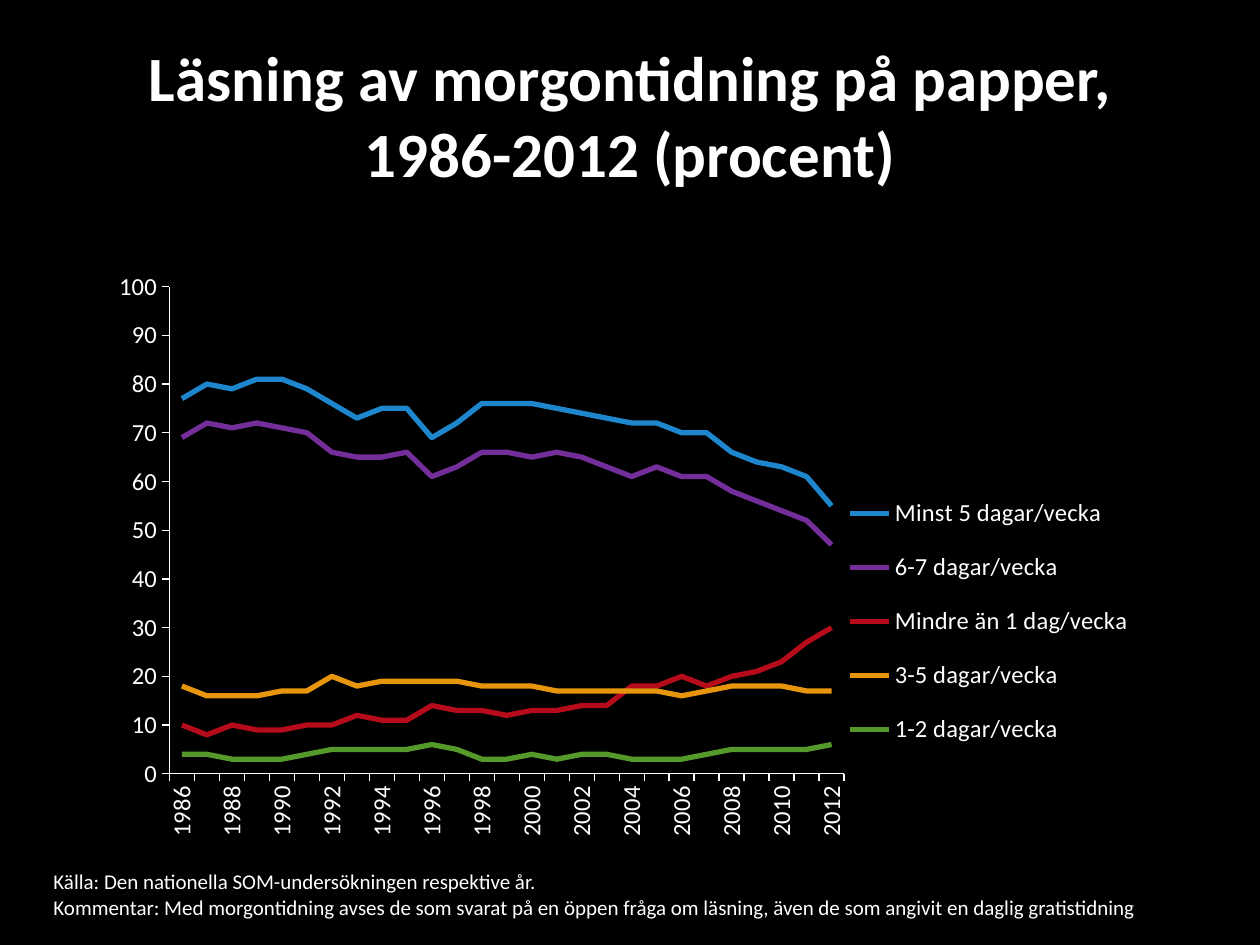
from lxml import etree
from pptx import Presentation
from pptx.chart.data import CategoryChartData
from pptx.dml.color import RGBColor
from pptx.enum.chart import XL_CHART_TYPE as ChartType, XL_LEGEND_POSITION as LegendPos
from pptx.enum.chart import XL_TICK_MARK as TickMark
from pptx.enum.text import MSO_ANCHOR as Anchor, PP_ALIGN as Align
from pptx.oxml import parse_xml
from pptx.oxml.ns import nsdecls, qn
from pptx.util import Pt

FONT = "Calibri"
COLORS = {"bg": "000000", "text": "FFFFFF", "blue": "1D86CD", "purple": "732E9A",
          "red": "B50B1B", "orange": "E8950E", "green": "55992B"}
YEARS = range(1986, 2013)
SERIES = [
    ("Minst 5 dagar/vecka", "blue",
     [77, 80, 79, 81, 81, 79, 76, 73, 75, 75, 69, 72, 76, 76,
      76, 75, 74, 73, 72, 72, 70, 70, 66, 64, 63, 61, 55]),
    ("6-7 dagar/vecka", "purple",
     [69, 72, 71, 72, 71, 70, 66, 65, 65, 66, 61, 63, 66, 66,
      65, 66, 65, 63, 61, 63, 61, 61, 58, 56, 54, 52, 47]),
    ("Mindre än 1 dag/vecka", "red",
     [10, 8, 10, 9, 9, 10, 10, 12, 11, 11, 14, 13, 13, 12,
      13, 13, 14, 14, 18, 18, 20, 18, 20, 21, 23, 27, 30]),
    ("3-5 dagar/vecka", "orange",
     [18, 16, 16, 16, 17, 17, 20, 18, 19, 19, 19, 19, 18, 18,
      18, 17, 17, 17, 17, 17, 16, 17, 18, 18, 18, 17, 17]),
    ("1-2 dagar/vecka", "green",
     [4, 4, 3, 3, 3, 4, 5, 5, 5, 5, 6, 5, 3, 3,
      4, 3, 4, 4, 3, 3, 3, 4, 5, 5, 5, 5, 6]),
]
NOTES = [
    "Källa: Den nationella SOM-undersökningen respektive år.",
    "Kommentar: Med morgontidning avses de som svarat på en öppen fråga om läsning, "
    "även de som angivit en daglig gratistidning",
]


def rgb(name):
    return RGBColor.from_string(COLORS[name])


def set_font(font, size, bold=False):
    font.name, font.size, font.bold = FONT, Pt(size), bold
    font.color.rgb = rgb("text")


def write(tf, lines, size, bold=False, align=Align.LEFT, anchor=Anchor.TOP):
    tf.word_wrap, tf.vertical_anchor = True, anchor
    for i, line in enumerate(lines):
        p = tf.add_paragraph() if i else tf.paragraphs[0]
        p.alignment = align
        r = p.add_run()
        r.text = line
        set_font(r.font, size, bold)


def add_title(s, text, box):
    title = s.shapes.title
    title.left, title.top, title.width, title.height = map(Pt, box)
    write(title.text_frame, [text], 36, bold=True, align=Align.CENTER, anchor=Anchor.MIDDLE)


def add_notes(s, lines, box):
    write(s.shapes.add_textbox(*map(Pt, box)).text_frame, lines, 12)


def set_layout(element, inner, **place):
    for old in element.findall(qn("c:layout")):
        element.remove(old)
    layout = parse_xml(f"<c:layout {nsdecls('c')}><c:manualLayout/></c:layout>")
    values = {"xMode": "edge", "yMode": "edge", **place}
    if inner:
        values = {"layoutTarget": "inner", **values}
    for tag, value in values.items():
        etree.SubElement(layout[0], qn(f"c:{tag}")).set("val", str(value))
    element.insert(0 if inner else 1, layout)


def format_axis(axis):
    axis.has_major_gridlines = False
    axis.major_tick_mark, axis.minor_tick_mark = TickMark.OUTSIDE, TickMark.NONE
    axis.format.line.color.rgb = rgb("text")
    axis.format.line.width = Pt(0.75)
    set_font(axis.tick_labels.font, 14)


def turn_year_labels(axis):
    element = axis._element
    body = element.find(f"{qn('c:txPr')}/{qn('a:bodyPr')}")
    body.set("rot", "-5400000")
    body.set("vert", "horz")
    skip = parse_xml(f"<c:tickLblSkip {nsdecls('c')} val='2'/>")
    element.find(qn("c:noMultiLvlLbl")).addprevious(skip)


def add_line_chart(s, box):
    data = CategoryChartData(number_format="0")
    data.categories = [str(year) for year in YEARS]
    for name, _, values in SERIES:
        data.add_series(name, values)
    chart = s.shapes.add_chart(ChartType.LINE, *map(Pt, box), data).chart
    set_font(chart.font, 14)
    chart.has_title = False
    plot = chart.plots[0]
    plot.vary_by_categories = False
    for line, (_, color, _) in zip(plot.series, SERIES):
        line.smooth = False
        line.format.line.color.rgb = rgb(color)
        line.format.line.width = Pt(3)
    format_axis(chart.category_axis)
    format_axis(chart.value_axis)
    turn_year_labels(chart.category_axis)
    axis = chart.value_axis
    axis.minimum_scale, axis.maximum_scale, axis.major_unit = 0, 100, 10
    chart.has_legend = True
    legend = chart.legend
    legend.position, legend.include_in_layout = LegendPos.RIGHT, False
    set_font(legend.font, 14)
    set_layout(legend._element, False, x=0.69, y=0.37, w=0.29, h=0.5)
    plot_area = chart._chartSpace.chart.plotArea
    set_layout(plot_area, True, x=0.07, y=0.05, w=0.63, h=0.83)


def main():
    """Build the newspaper reading slide."""
    prs = Presentation()
    prs.slide_width, prs.slide_height = Pt(720), Pt(540)
    s = prs.slides.add_slide(prs.slide_layouts[5])
    s.background.fill.solid()
    s.background.fill.fore_color.rgb = rgb("bg")
    add_title(s, "Läsning av morgontidning på papper, 1986-2012 (procent)", (54, 9.5, 612, 112))
    add_line_chart(s, (54, 147, 612, 335.5))
    add_notes(s, NOTES, (23.5, 493, 683.5, 36))
    prs.save("out.pptx")


if __name__ == "__main__":
    main()
